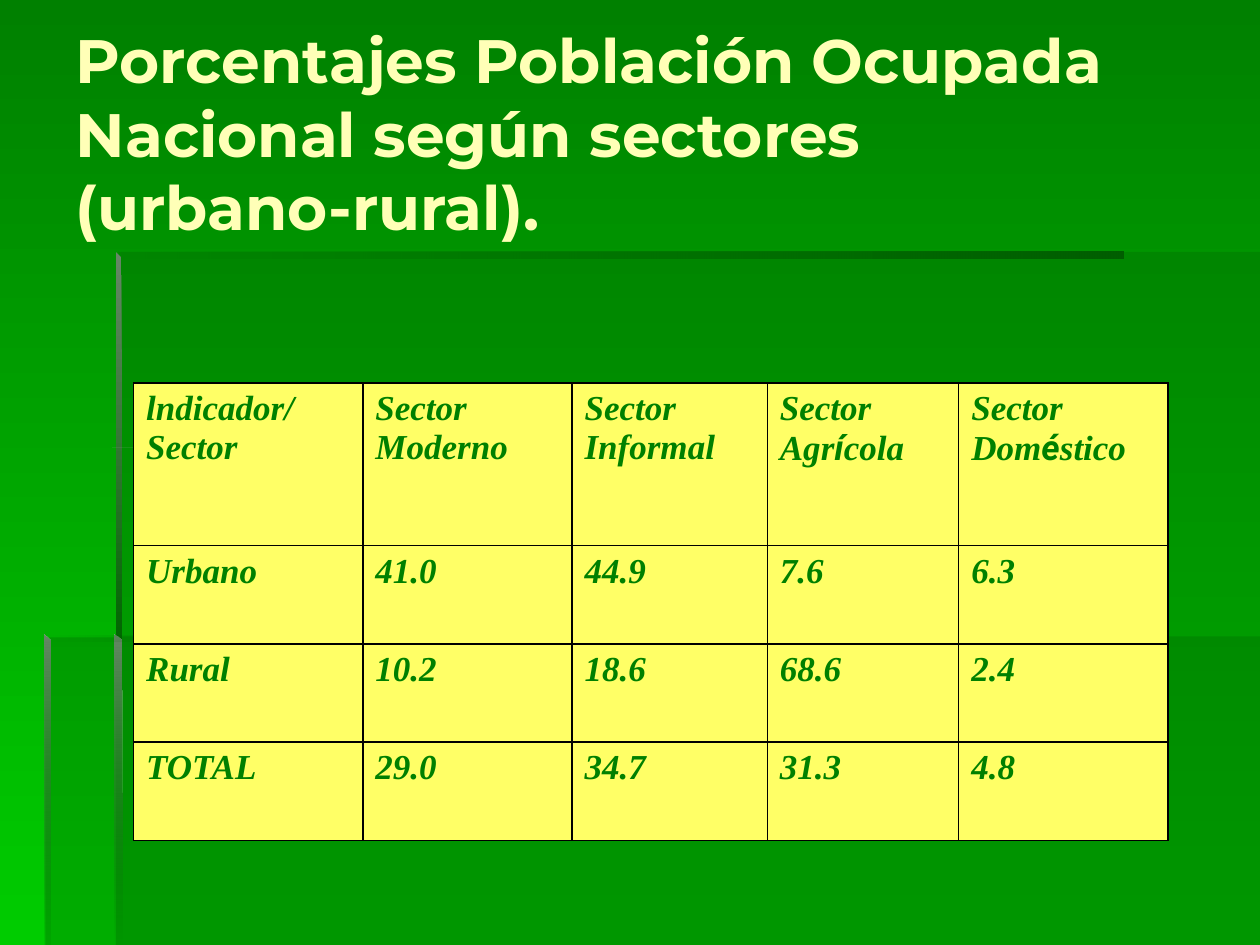
from dataclasses import dataclass
from itertools import groupby

from lxml.etree import SubElement as Sub
from pptx import Presentation
from pptx.dml.color import RGBColor as Rgb
from pptx.enum.shapes import MSO_SHAPE as Kind
from pptx.enum.text import MSO_ANCHOR as Anchor, PP_ALIGN as Align
from pptx.oxml import parse_xml
from pptx.oxml.ns import nsdecls, qn
from pptx.util import Inches, Pt


@dataclass(frozen=True)
class Theme:
    top: str = "008000"
    base: str = "00CC00"
    shade: str = "006600"
    deep: str = "005E00"
    light: str = "668666"
    gray: str = "B2B2B2"
    title: str = "FFFFB7"
    cell: str = "FFFF66"
    text: str = "008000"
    edge: str = "000000"
    head: str = "Montserrat"
    body: str = "Times New Roman"
    accent: str = "Roboto"
    big: int = 35
    small: int = 20


class Page:
    def __init__(self, deck, theme):
        self.theme = theme
        self.slide = deck.slides.add_slide(deck.slide_layouts[5])

    def blend(self, fill, colors, angle):
        fill.gradient()
        fill.gradient_angle = angle
        for stop, color in zip(fill.gradient_stops, colors):
            stop.color.rgb = Rgb.from_string(color)

    def back(self, *colors):
        self.blend(self.slide.background.fill, colors, 270)

    def plain(self, shape, color):
        shape.fill.solid()
        shape.fill.fore_color.rgb = Rgb.from_string(color)
        shape.line.fill.background()
        shape.shadow.inherit = False

    def area(self, points, colors, alphas, angle=0):
        """Closed outline with a solid or two-colour fill; alphas in percent."""
        start, *rest = [(Inches(x), Inches(y)) for x, y in points]
        build = self.slide.shapes.build_freeform(*start, scale=1.0)
        build.add_line_segments(rest, close=True)
        shape = build.convert_to_shape()
        self.plain(shape, colors[0])
        if len(colors) > 1:
            self.blend(shape.fill, colors, angle)
        marks = shape._element.spPr.iter(qn("a:srgbClr"))
        for mark, alpha in zip(list(marks), alphas):
            if alpha < 100:
                Sub(mark, qn("a:alpha")).set("val", str(alpha * 1000))

    def rect(self, x, y, w, h, color):
        box = map(Inches, (x, y, w, h))
        self.plain(self.slide.shapes.add_shape(Kind.RECTANGLE, *box), color)

    def style(self, run, face, size, color, italic=False):
        font = run.font
        font.name, font.size = face, Pt(size)
        font.bold, font.italic = True, italic
        font.color.rgb = Rgb.from_string(color)

    def title(self, text, x, y, w, h):
        look, shape = self.theme, self.slide.shapes.title
        shape.left, shape.top, shape.width, shape.height = map(Inches, (x, y, w, h))
        frame = shape.text_frame
        frame.text = text
        frame.word_wrap = True
        frame.vertical_anchor = Anchor.MIDDLE
        para = frame.paragraphs[0]
        para.alignment = Align.LEFT
        for run in para.runs:
            self.style(run, look.head, look.big, look.title)

    def cell(self, cell, text):
        look = self.theme
        cell.fill.solid()
        cell.fill.fore_color.rgb = Rgb.from_string(look.cell)
        frame = cell.text_frame
        frame.text = text
        for para in frame.paragraphs:
            line = para.text
            para.text = ""
            para.alignment = Align.JUSTIFY
            # Accented letters take their own font
            for accent, part in groupby(line, key=lambda c: c in "íé"):
                run = para.add_run()
                run.text = "".join(part)
                face = look.accent if accent else look.body
                self.style(run, face, look.small, look.text, italic=True)
        # Borders come before the fill
        props = cell._tc.get_or_add_tcPr()
        for i, side in enumerate("LRTB"):
            props.insert(i, parse_xml(
                f'<a:ln{side} {nsdecls("a")} w="{Pt(1)}"><a:solidFill>'
                f'<a:srgbClr val="{look.edge}"/></a:solidFill></a:ln{side}>'))

    def table(self, rows, x, y, widths, heights):
        box = map(Inches, (x, y, sum(widths), sum(heights)))
        grid = self.slide.shapes.add_table(len(rows), len(widths), *box).table
        for col, width in zip(grid.columns, widths):
            col.width = Inches(width)
        for row, height, texts in zip(grid.rows, heights, rows):
            row.height = Inches(height)
            for cell, text in zip(row.cells, texts):
                self.cell(cell, text)


def main():
    deck = Presentation()
    deck.slide_width, deck.slide_height = Inches(10), Inches(7.5)
    look = Theme()
    page = Page(deck, look)
    page.back(look.top, look.base)

    # Shaded panels
    page.area([(0.92, 5.05), (0.92, 7.5), (10, 7.5), (10, 5.05)], [look.shade], [30])
    page.area([(0.94, 5.06), (0.36, 5.06), (0.36, 7.5), (10, 7.5), (10, 2), (0.94, 2)],
              [look.shade], [30])

    # Bevelled panel edges
    flat, tall = (look.shade, look.deep), (look.light, look.shade)
    page.area([(0.92, 2), (0.92, 2.05), (8.92, 2.05), (8.92, 2)], flat, (0, 100))
    page.area([(0.92, 2), (0.92, 5.1), (0.97, 5.1), (0.96, 2.04)], tall, (100, 100), 270)
    page.area([(0.91, 7.5), (0.97, 7.5), (0.96, 5.08), (0.91, 5.04)], tall, (100, 0), 270)
    page.area([(0.35, 5.04), (0.35, 5.09), (5.35, 5.09), (5.35, 5.04)], flat, (0, 100))
    page.area([(0.35, 5.04), (0.35, 7.5), (0.4, 7.5), (0.4, 5.09)], tall, (100, 10), 270)

    # Title and hairline
    page.title("Porcentajes Población Ocupada Nacional según sectores\v(urbano-rural).",
               0.5, 0.27, 9.17, 1.57)
    page.rect(0.89, 3.55, 1.15, 0, look.gray)

    # Shares by sector
    names = ("Moderno", "Informal", "Agrícola", "Doméstico")
    rows = [
        ["lndicador/Sector"] + [f"Sector\n{name}" for name in names],
        ["Urbano", "41.0", "44.9", "7.6", "6.3"],
        ["Rural", "10.2", "18.6", "68.6", "2.4"],
        ["TOTAL", "29.0", "34.7", "31.3", "4.8"],
    ]
    page.table(rows, 1.06, 3.04, (1.82, 1.66, 1.55, 1.52, 1.66), [1.29] + [0.78] * 3)
    deck.save("out.pptx")


if __name__ == "__main__":
    main()
